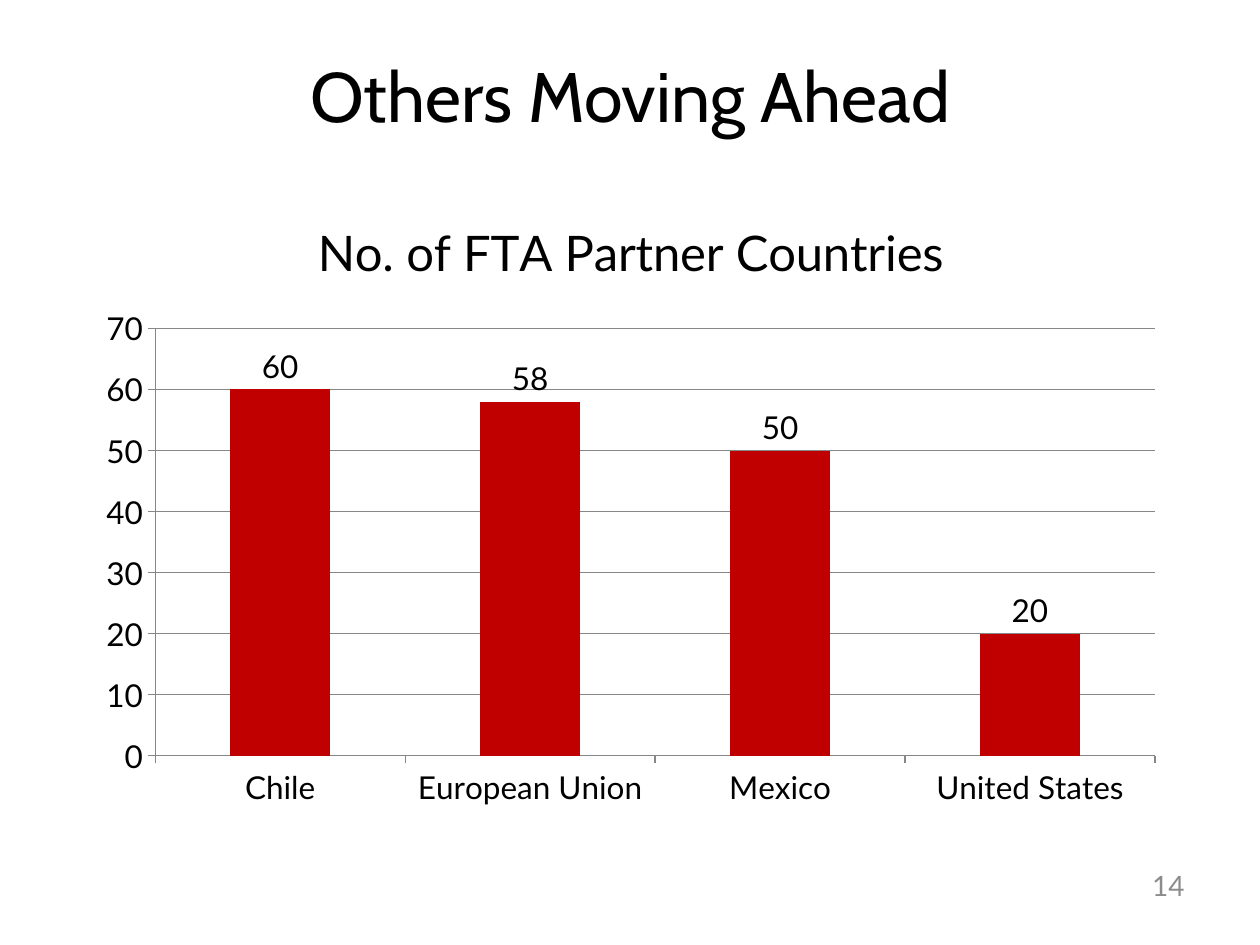
from pptx import Presentation
from pptx.chart.data import CategoryChartData
from pptx.dml.color import RGBColor
from pptx.enum.chart import XL_CHART_TYPE, XL_LABEL_POSITION, XL_TICK_MARK
from pptx.enum.text import MSO_ANCHOR, PP_ALIGN
from pptx.util import Inches, Pt

COLORS = {"text": "000000", "bar": "C00000", "line": "878787", "number": "8C8C8C"}


class SlideBuilder:
    """Holds the style and the current slide, and adds elements to it."""

    heading_font = "Cabin"
    body_font = "Lato"

    def __init__(self, presentation):
        self.slide = presentation.slides.add_slide(presentation.slide_layouts[5])

    def color(self, name):
        return RGBColor.from_string(COLORS[name])

    def style_font(self, font, name, size, color="text"):
        font.name = name
        font.size = Pt(size)
        font.bold = False
        font.color.rgb = self.color(color)

    def fill_text(self, shape, text, align, font_name, size, color="text"):
        text_frame = shape.text_frame
        text_frame.text = text
        text_frame.word_wrap = True
        text_frame.vertical_anchor = MSO_ANCHOR.MIDDLE
        paragraph = text_frame.paragraphs[0]
        paragraph.alignment = align
        self.style_font(paragraph.runs[0].font, font_name, size, color)

    def title(self, text, left, top, width, height):
        shape = self.slide.shapes.title
        shape.left, shape.top = Inches(left), Inches(top)
        shape.width, shape.height = Inches(width), Inches(height)
        self.fill_text(shape, text, PP_ALIGN.CENTER, self.heading_font, 40)

    def page_number(self, text, left, top, width, height):
        shape = self.slide.shapes.add_textbox(
            Inches(left), Inches(top), Inches(width), Inches(height)
        )
        self.fill_text(shape, text, PP_ALIGN.RIGHT, self.body_font, 16, "number")

    def column_chart(self, name, values, left, top, width, height):
        data = CategoryChartData()
        data.categories = list(values)
        data.add_series(name, list(values.values()))
        chart = self.slide.shapes.add_chart(
            XL_CHART_TYPE.COLUMN_CLUSTERED,
            Inches(left), Inches(top), Inches(width), Inches(height), data,
        ).chart
        self.style_font(chart.font, self.body_font, 18)
        chart.has_legend = False
        chart.has_title = True
        title_frame = chart.chart_title.text_frame
        title_frame.text = name
        self.style_font(title_frame.paragraphs[0].runs[0].font, self.body_font, 28)
        chart.chart_title.include_in_layout = False

        for axis in (chart.category_axis, chart.value_axis):
            axis.major_tick_mark = XL_TICK_MARK.OUTSIDE
            axis.minor_tick_mark = XL_TICK_MARK.NONE
            self.style_line(axis.format.line)
        value_axis = chart.value_axis
        value_axis.minimum_scale = 0
        value_axis.maximum_scale = 70
        value_axis.major_unit = 10
        value_axis.has_major_gridlines = True
        self.style_line(value_axis.major_gridlines.format.line)

        plot = chart.plots[0]
        plot.gap_width = 150
        plot.vary_by_categories = False
        fill = plot.series[0].format.fill
        fill.solid()
        fill.fore_color.rgb = self.color("bar")
        labels = plot.series[0].data_labels
        labels.show_value = True
        labels.position = XL_LABEL_POSITION.OUTSIDE_END
        self.style_font(labels.font, self.body_font, 18)

    def style_line(self, line):
        line.color.rgb = self.color("line")
        line.width = Pt(0.75)


def main():
    presentation = Presentation()
    presentation.slide_width = Inches(10)
    presentation.slide_height = Inches(7.5)
    builder = SlideBuilder(presentation)
    builder.title("Others Moving Ahead", 0, 0, 10, 1.5)
    builder.page_number("14", 8.33, 6.83, 1.17, 0.4)
    builder.column_chart(
        "No. of FTA Partner Countries",
        {"Chile": 60, "European Union": 58, "Mexico": 50, "United States": 20},
        0.67, 1.5, 8.67, 5,
    )
    presentation.save("out.pptx")


if __name__ == "__main__":
    main()
